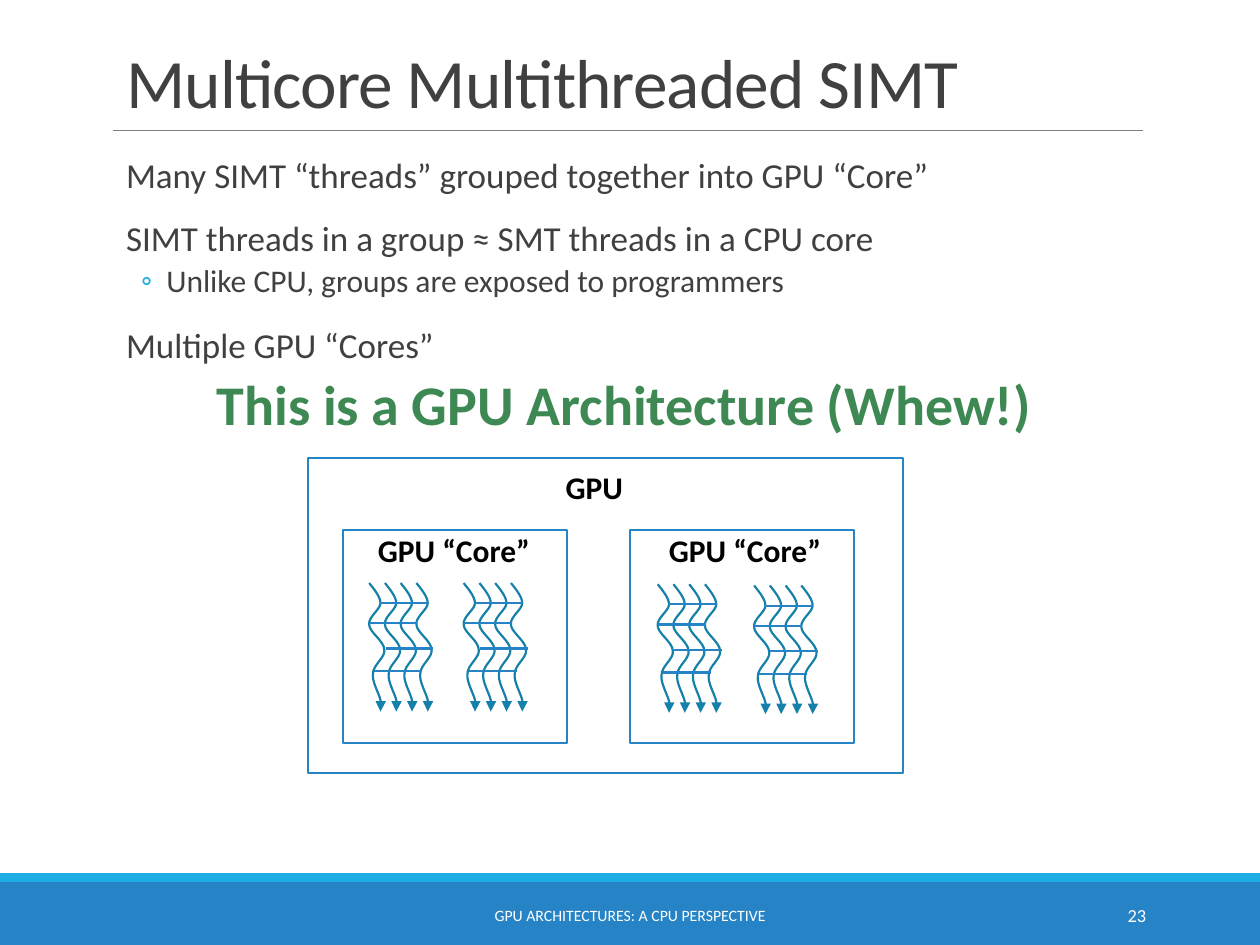
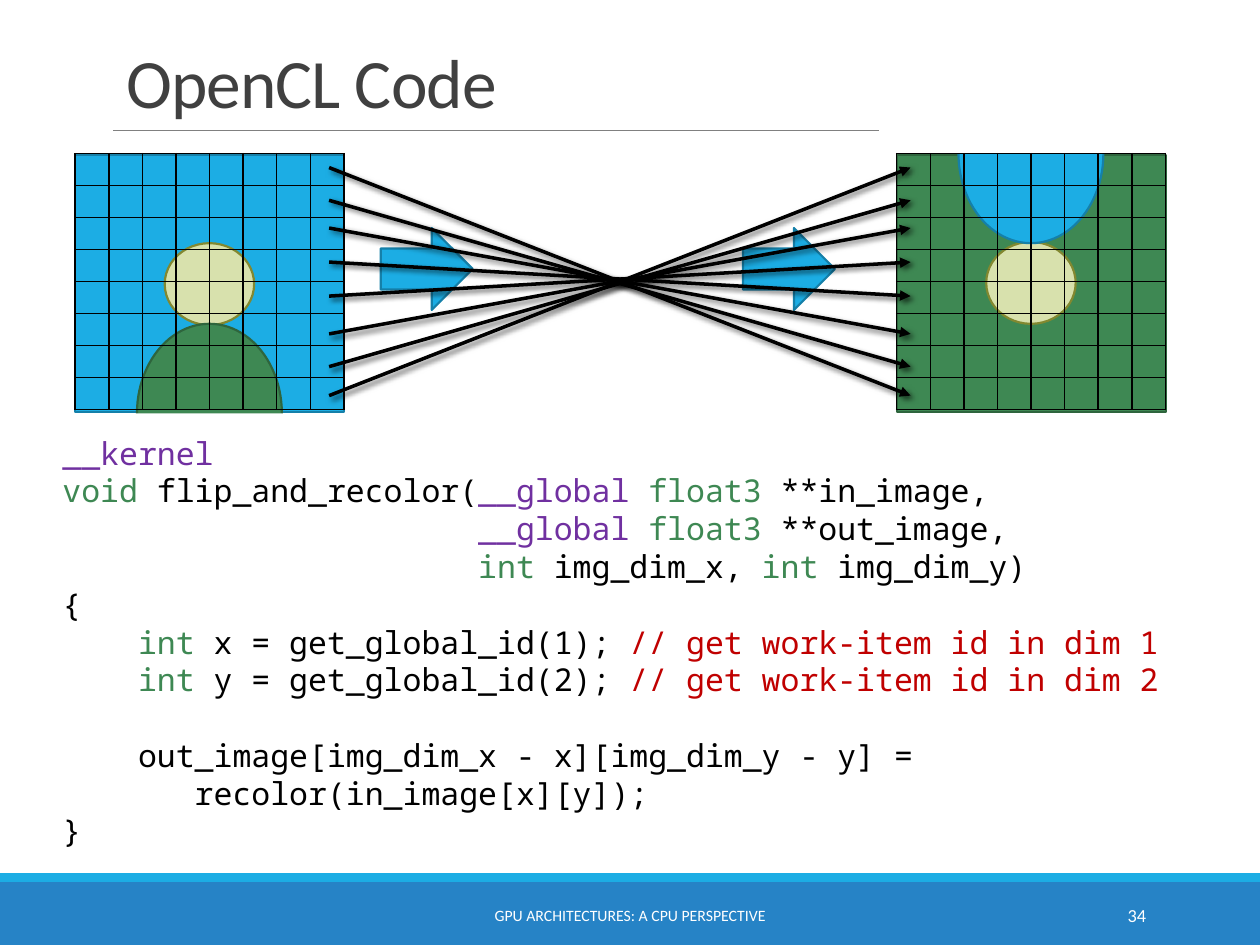
from dataclasses import dataclass
from pptx import Presentation
from pptx.dml.color import RGBColor
from pptx.enum.shapes import MSO_CONNECTOR as CONN, MSO_SHAPE as SHAPE
from pptx.enum.text import MSO_ANCHOR as ANCHOR, MSO_AUTO_SIZE as FIT, PP_ALIGN as ALIGN
from pptx.oxml import parse_xml
from pptx.oxml.ns import nsdecls, qn
from pptx.util import Inches, Pt


@dataclass(frozen=True)
class Theme:
    font: str = "Calibri"
    mono: str = "Noto Sans Mono"
    blue: str = "2683C6"
    cyan: str = "1CADE4"
    cyan_dark: str = "1580A9"
    green: str = "3E8853"
    green_dark: str = "2E653D"
    sand: str = "D8E1AD"
    sand_dark: str = "828830"
    text: str = "404040"
    rule: str = "808080"
    purple: str = "7030A0"
    red: str = "C00000"
    black: str = "000000"
    white: str = "FFFFFF"
    title: float = 39.6
    callout: float = 32
    body: float = 20
    label: float = 18
    page: float = 10.5
    footer: float = 9
    line: float = 1.25


T = Theme()
COLS, ROWS = 100, 75
CELL = 0.1
FOOTER = "GPU ARCHITECTURES: A CPU PERSPECTIVE"


@dataclass(frozen=True)
class Box:
    x: float
    y: float
    w: float
    h: float

    def sub(self, x, y, w, h, flip=False):
        top = self.h - y - h if flip else y
        return Box(self.x + x, self.y + top, w, h)

    def emu(self):
        return [cells(v) for v in (self.x, self.y, self.w, self.h)]


PAGE = Box(0, 0, COLS, ROWS)


def cells(n):
    return Inches(n * CELL)


def rgb(value):
    return RGBColor.from_string(value)


def xml(tag, attrs="", inner=""):
    return parse_xml(f'<a:{tag} {nsdecls("a")} {attrs}>{inner}</a:{tag}>')


def style_font(font, size, color, bold=False, name=T.font):
    font.size, font.bold, font.name = Pt(size), bold, name
    font.color.rgb = rgb(color)


def style_line(line, color, width=T.line):
    line.color.rgb = rgb(color)
    line.width = Pt(width)


def arrowhead(sp):
    sp.line._get_or_add_ln().append(xml("tailEnd", 'type="triangle"'))


def add_box(s, box, fill=None, line=None, kind=SHAPE.RECTANGLE):
    sp = s.shapes.add_shape(kind, *box.emu())
    sp.shadow.inherit = False
    if fill:
        sp.fill.solid()
        sp.fill.fore_color.rgb = rgb(fill)
    else:
        sp.fill.background()
    if line:
        style_line(sp.line, line)
    else:
        sp.line.fill.background()
    return sp


def add_line(s, x1, y1, x2, y2, color, width=T.line, shadow=""):
    sp = s.shapes.add_connector(CONN.STRAIGHT, *map(cells, (x1, y1, x2, y2)))
    style_line(sp.line, color, width)
    sp._element.spPr.append(xml("effectLst", inner=shadow))
    return sp


def add_text(s, box, text, size, color, bold=False, align=ALIGN.LEFT, anchor=ANCHOR.TOP, wrap=True):
    tf = s.shapes.add_textbox(*box.emu()).text_frame
    tf.text, tf.word_wrap, tf.vertical_anchor = text, wrap, anchor
    for p in tf.paragraphs:
        p.alignment = align
        for r in p.runs:
            style_font(r.font, size, color, bold)
    return tf


def add_chrome(s, box):
    add_box(s, box.sub(0, 70, COLS, 5), T.blue)
    add_box(s, box.sub(0, 69.3, COLS, 0.7), T.cyan)
    add_line(s, box.x + 9, box.y + 10.36, box.x + 90.7, box.y + 10.36, T.rule, 0.5)


def add_headings(s, box, title, number):
    tf = add_text(s, box.sub(9.04, 3.1, 82.5, 7.1), title, T.title, T.text, anchor=ANCHOR.BOTTOM)
    p = tf.paragraphs[0]
    p.line_spacing = 0.85
    p.runs[0]._r.get_or_add_rPr().set("spc", "-50")
    add_text(s, box.sub(30.2, 70.65, 39.6, 4), FOOTER, T.footer, T.white,
             align=ALIGN.CENTER, anchor=ANCHOR.MIDDLE)
    add_text(s, box.sub(81.2, 70.6, 10.75, 4), number, T.page, T.white,
             align=ALIGN.RIGHT, anchor=ANCHOR.MIDDLE)


def indent(p, left, hanging=0):
    pPr = p._p.get_or_add_pPr()
    pPr.set("marL", str(cells(left)))
    pPr.set("indent", str(-cells(hanging)))
    return pPr


def add_points(s, box, points):
    tf = add_text(s, box, "\n".join(text for _, text in points), T.body, T.text)
    tf.margin_left = tf.margin_right = 0
    for p, (level, _) in zip(tf.paragraphs, points):
        p.line_spacing = 0.9
        p.space_before, p.space_after = (Pt(2), Pt(4)) if level else (Pt(12), Pt(2))
        if level:
            p.level = level
            p.runs[0].font.size = Pt(T.label)
            pPr = indent(p, 4.2, 2)
            pPr.append(xml("buClr", inner=f'<a:srgbClr val="{T.cyan}"/>'))
            pPr.append(xml("buFont", f'typeface="{T.font}"'))
            pPr.append(xml("buChar", 'char="◦"'))
        else:
            indent(p, 1)


WAVE = [((0.4, 0.5), (0.9, 1.1), (0.9, 1.6)), ((0.9, 2.1), (-0.1, 2.7), (0, 3.3)),
        ((0, 3.9), (1.2, 4.6), (1.2, 5.3)), ((1.3, 5.9), (0.3, 6.5), (0.3, 7.2)),
        ((0.2, 7.8), (0.8, 8.8), (0.9, 9.3)), ((1, 9.8), (1, 10), (0.9, 10.2))]
RUNGS = [(0.9, 1.6), (0, 3.2), (1.3, 5.2), (0.4, 7)]
STRANDS, STRAND_GAP, RUNG = 4, 1.25, 3.8


def add_strand(s, x, y):
    fb = s.shapes.build_freeform(cells(x), cells(y))
    fb.add_line_segments([(cells(x + dx), cells(y + dy)) for *_, (dx, dy) in WAVE], close=False)
    sp = fb.convert_to_shape()
    for segment, curve in zip(list(sp._element.iter(qn("a:lnTo"))), WAVE):
        points = "".join(f'<a:pt x="{cells(dx)}" y="{cells(dy)}"/>' for dx, dy in curve)
        segment.getparent().replace(segment, xml("cubicBezTo", inner=points))
    sp.shadow.inherit = False
    sp.fill.background()
    style_line(sp.line, T.cyan_dark)
    arrowhead(sp)


def add_threads(s, x, y):
    for i in range(STRANDS):
        add_strand(s, x + i * STRAND_GAP, y)
    for dx, dy in RUNGS:
        add_line(s, x + dx, y + dy, x + dx + RUNG, y + dy, T.blue)


def add_label(s, box, text, size=T.label, color=T.black):
    tf = add_text(s, box, text, size, color, bold=True, wrap=False)
    tf.auto_size = FIT.SHAPE_TO_FIT_TEXT


def add_core(s, box, label_x, groups):
    for dx, dy in groups:
        add_threads(s, box.x + dx, box.y + dy)
    add_box(s, box, line=T.blue)
    add_label(s, box.sub(label_x, -0.4, 14.2, 4), "GPU “Core”")


def add_gpu(s, box):
    add_core(s, box.sub(2.75, 5.7, 17.8, 16.9), 1.8, [(2.1, 4.2), (9.6, 4.2)])
    add_core(s, box.sub(25.55, 5.7, 17.8, 16.9), 2.1, [(2.2, 4.3), (9.85, 4.4)])
    add_box(s, box, line=T.blue)
    add_label(s, box.sub(19.45, 0.3, 6.6, 4), "GPU")


def add_portrait(s, box, back, body, flip=False):
    add_box(s, box, *back)
    add_box(s, box.sub(7.1, 7, 7.1, 6.5, flip), T.sand, T.sand_dark, SHAPE.OVAL)
    add_box(s, box.sub(4.9, 13.4, 11.5, 14.2, flip), *body, SHAPE.OVAL)
    add_box(s, box.sub(-1.4, 20.5, 25.7, 10.1, flip), T.white)


def add_pixels(s, box, n=8):
    table = s.shapes.add_table(n, n, *box.emu()).table
    table.first_row = table.horz_banding = False
    for col in table.columns:
        col.width = cells(box.w / n)
    for row in table.rows:
        row.height = cells(box.h / n)
    for cell in table.iter_cells():
        cell.margin_left = cell.margin_right = cell.margin_top = cell.margin_bottom = 0
        tcPr = cell._tc.get_or_add_tcPr()
        for side in "LRTB":
            tcPr.append(xml(f"ln{side}", f'w="{Pt(1)}"',
                            f'<a:solidFill><a:srgbClr val="{T.black}"/></a:solidFill>'))
        cell.fill.background()
        p = cell.text_frame.paragraphs[0]._p
        for end in p.findall(qn("a:endParaRPr")):
            p.remove(end)
        p.append(xml("endParaRPr", 'sz="800"'))


SHADOW = (f'<a:outerShdw blurRad="{Pt(3)}" dist="{Pt(2)}" dir="2700000" algn="tl" rotWithShape="0">'
          f'<a:srgbClr val="{T.black}"><a:alpha val="60000"/></a:srgbClr></a:outerShdw>')
CYAN, GREEN = (T.cyan, T.cyan_dark), (T.green, T.green_dark)
IMAGE_W, IMAGE_H, TARGET_X = 21.35, 20.4, 65.2
ROW_MIDS = [1, 3.6, 5.8, 8.5, 11.2, 14.2, 16.8, 19.1]


def add_target(s, box):
    add_portrait(s, box.sub(TARGET_X, 0, IMAGE_W, IMAGE_H), GREEN, CYAN, flip=True)


def add_flip(s, box):
    for x in (24.25, 53):
        add_box(s, box.sub(x, 5.8, 7.3, 6.5), *CYAN, SHAPE.RIGHT_ARROW)
    add_portrait(s, box.sub(0, 0, IMAGE_W, IMAGE_H), CYAN, GREEN)
    for x in (0, TARGET_X):
        add_pixels(s, box.sub(x, -0.1, IMAGE_W, IMAGE_H - 0.1))
    for y1, y2 in zip(ROW_MIDS, reversed(ROW_MIDS)):
        arrowhead(add_line(s, box.x + 20.15, box.y + y1, box.x + 66.3, box.y + y2, T.black, 2, SHADOW))


CHAR = 1.5
LINE_PT = 21.5
K, G, B, R = T.purple, T.green, T.black, T.red
CODE = [
    (0, [("__kernel", K)]),
    (0, [("void ", G), ("flip_and_recolor(", B), ("__global ", K), ("float3", G), (" **in_image,", B)]),
    (22, [("__global ", K), ("float3", G), (" **out_image,", B)]),
    (22, [("int ", G), ("img_dim_x, ", B), ("int ", G), ("img_dim_y)", B)]),
    (0, [("{", B)]),
    (4, [("int", G), (" x = get_global_id(1); ", B), ("// get work-item id in dim 1", R)]),
    (4, [("int", G), (" y = get_global_id(2); ", B), ("// get work-item id in dim 2", R)]),
    (4, [("out_image[img_dim_x - x][img_dim_y - y] =", B)]),
    (7, [("recolor(in_image[x][y]);", B)]),
    (0, [("}", B)]),
]
GAP_BEFORE = 7


def add_code(s, box):
    tf = add_text(s, box, "", T.label, T.black)
    for i, (chars, runs) in enumerate(CODE):
        p = tf.add_paragraph() if i else tf.paragraphs[0]
        indent(p, chars * CHAR)
        if i == GAP_BEFORE:
            p.space_before = Pt(LINE_PT)
        for text, color in runs:
            r = p.add_run()
            r.text = text
            style_font(r.font, T.label, color, name=T.mono)


def simt_slide(s):
    add_chrome(s, PAGE)
    add_headings(s, PAGE, "Multicore Multithreaded SIMT", "23")
    add_points(s, PAGE.sub(9, 12.1, 82.5, 21.4), [
        (0, "Many SIMT “threads” grouped together into GPU “Core”"),
        (0, "SIMT threads in a group ≈ SMT threads in a CPU core"),
        (1, "Unlike CPU, groups are exposed to programmers"),
        (0, "Multiple GPU “Cores”"),
    ])
    add_gpu(s, PAGE.sub(24.45, 36.37, 47.2, 25))
    add_label(s, PAGE.sub(16.2, 28.8, 68.7, 6.4), "This is a GPU Architecture (Whew!)", T.callout, T.green)


def code_slide(s):
    images = PAGE.sub(5.97, 12.3, 86.6, 20.4)
    add_chrome(s, PAGE)
    add_target(s, images)
    add_headings(s, PAGE, "OpenCL Code", "34")
    add_flip(s, images)
    add_code(s, PAGE.sub(3.97, 33.93, 90.5, 34.3))


def main():
    prs = Presentation()
    prs.slide_width, prs.slide_height = cells(COLS), cells(ROWS)
    for build in (simt_slide, code_slide):
        build(prs.slides.add_slide(prs.slide_layouts[6]))
    prs.save("out.pptx")


if __name__ == "__main__":
    main()
